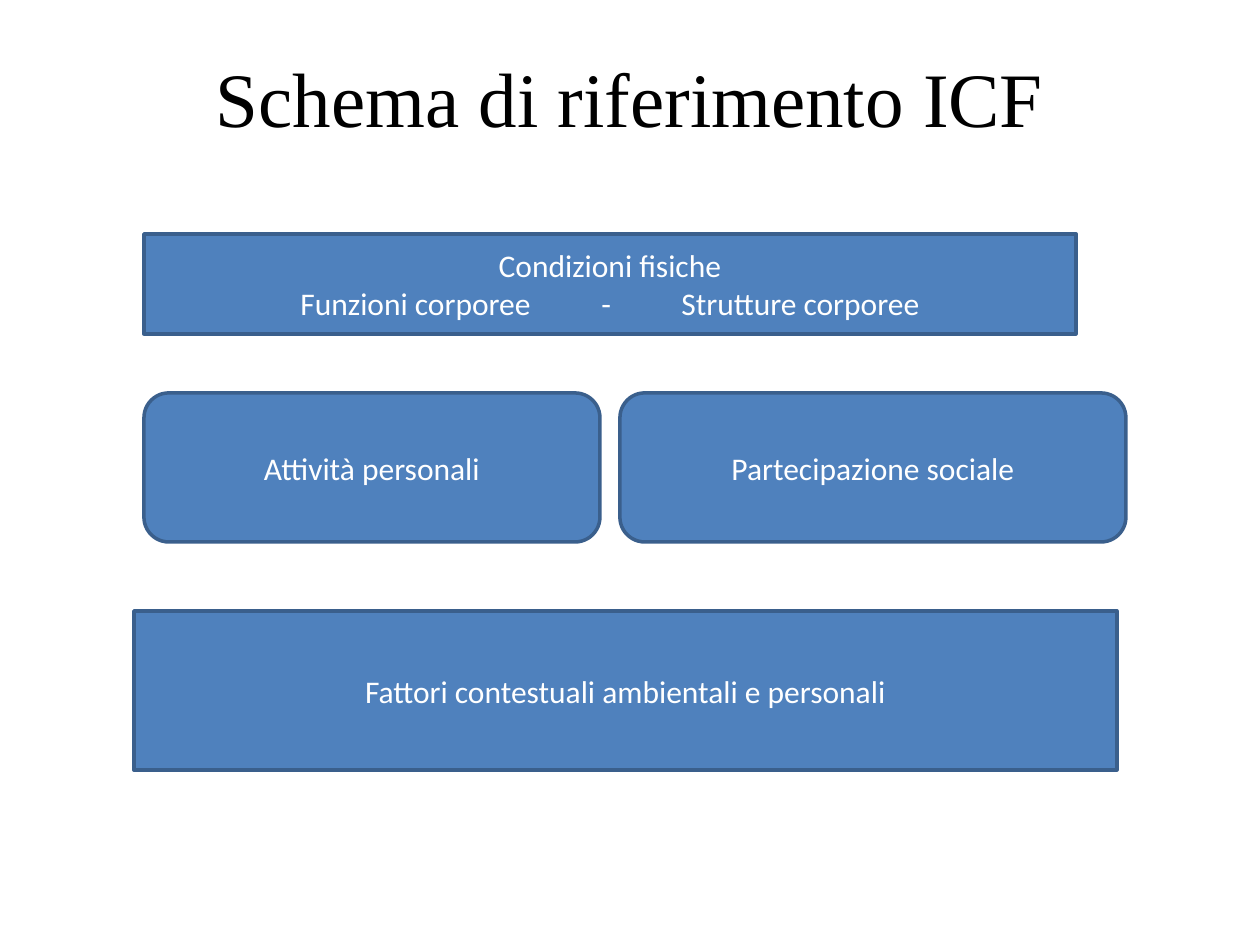
from lxml.etree import SubElement
from pptx import Presentation
from pptx.dml.color import RGBColor
from pptx.enum.shapes import MSO_SHAPE
from pptx.enum.text import MSO_ANCHOR, PP_ALIGN
from pptx.oxml.ns import qn
from pptx.util import Pt

EMU_PER_PX = 914400 / 126
COLORS = {"text": "000000", "box": "4F81BD", "outline": "3A5F8C", "label": "FFFFFF"}
TITLE_FONT = {"name": "Times New Roman", "size": Pt(44)}
LABEL_FONT = {"name": "Calibri", "size": Pt(18)}
FRAME = {"word_wrap": True, "vertical_anchor": MSO_ANCHOR.MIDDLE}
COLUMN_STOPS = (144, 445, 525)


def px(length):
    return round(length * EMU_PER_PX)


def color(name):
    return RGBColor.from_string(COLORS[name])


def apply_format(target, values):
    for name, value in values.items():
        setattr(target, name, value)


def add_tab_stops(paragraph, stops):
    tab_list = SubElement(paragraph._p.get_or_add_pPr(), qn("a:tabLst"))
    for stop in stops:
        SubElement(tab_list, qn("a:tab"), pos=str(px(stop)), algn="l")


def write_lines(shape, lines, font, color_name):
    frame = shape.text_frame
    apply_format(frame, FRAME)
    for index, line in enumerate(lines):
        paragraph = frame.add_paragraph() if index else frame.paragraphs[0]
        run = paragraph.add_run()
        run.text = line
        apply_format(run.font, font)
        run.font.color.rgb = color(color_name)
        has_columns = "\t" in line
        paragraph.alignment = PP_ALIGN.LEFT if has_columns else PP_ALIGN.CENTER
        if has_columns:
            add_tab_stops(paragraph, COLUMN_STOPS)


def set_title(slide, text, left, top, width, height):
    bounds = {"left": px(left), "top": px(top), "width": px(width), "height": px(height)}
    title = slide.shapes.title
    apply_format(title, bounds)
    write_lines(title, [text], TITLE_FONT, "text")


def add_box(slide, kind, bounds, lines):
    box = slide.shapes.add_shape(kind, *map(px, bounds))
    box.shadow.inherit = False
    box.fill.solid()
    box.fill.fore_color.rgb = color("box")
    box.line.color.rgb = color("outline")
    box.line.width = Pt(2)
    write_lines(box, lines, LABEL_FONT, "label")


def main():
    presentation = Presentation()
    apply_format(presentation, {"slide_width": px(1260), "slide_height": px(945)})
    slide = presentation.slides.add_slide(presentation.slide_layouts[5])
    set_title(slide, "Schema di riferimento ICF", 63, 38, 1134, 117)

    rectangle, rounded = MSO_SHAPE.RECTANGLE, MSO_SHAPE.ROUNDED_RECTANGLE
    conditions = ["Condizioni fisiche", "\tFunzioni corporee\t-\tStrutture corporee"]
    boxes = [
        (rectangle, (144, 234, 932, 100), conditions),
        (rounded, (144, 393, 456, 149), ["Attività personali"]),
        (rounded, (620, 393, 506, 149), ["Partecipazione sociale"]),
        (rectangle, (134, 611, 983, 159), ["Fattori contestuali ambientali e personali"]),
    ]
    for kind, bounds, lines in boxes:
        add_box(slide, kind, bounds, lines)
    presentation.save("out.pptx")


if __name__ == "__main__":
    main()
